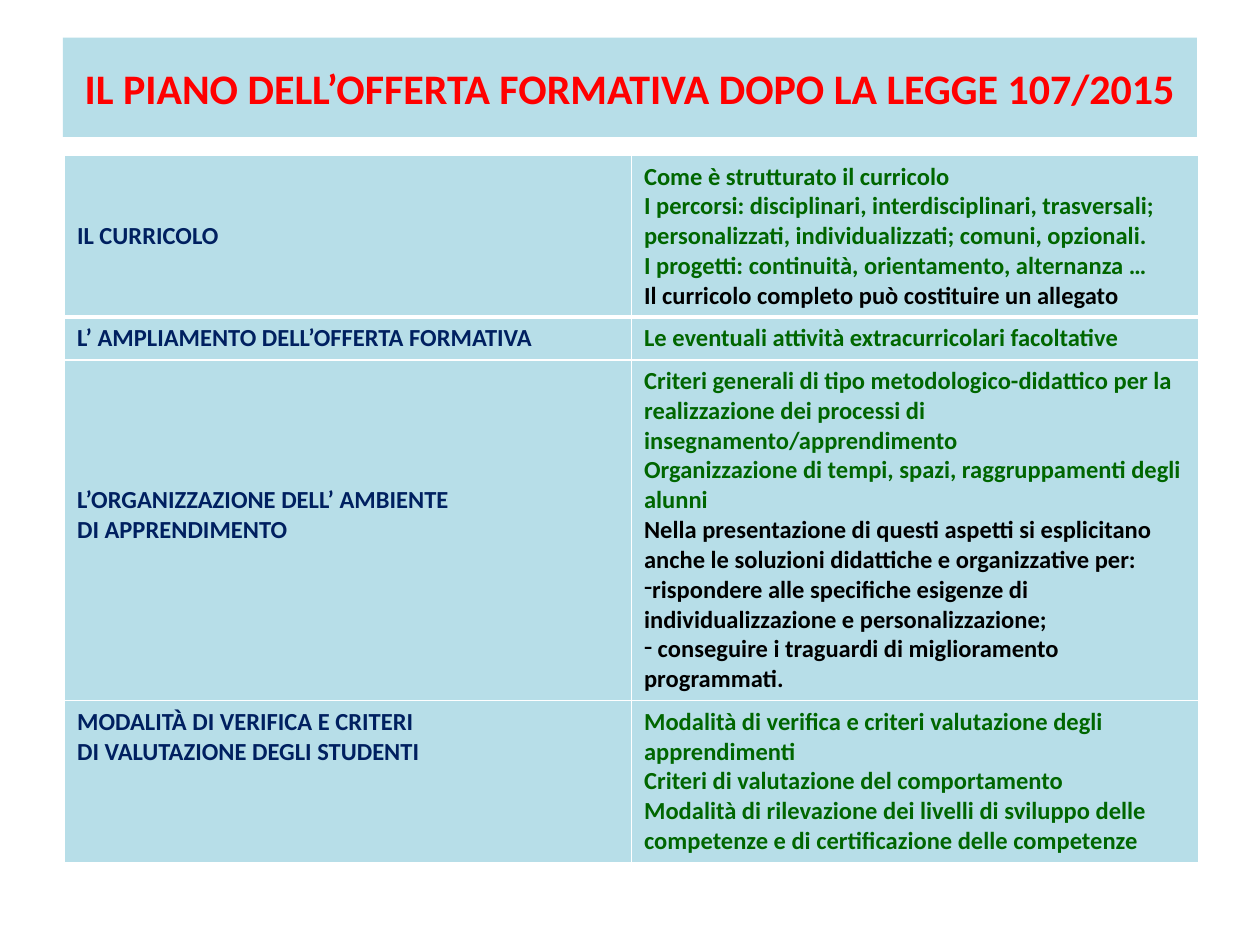
from lxml.etree import SubElement
from pptx import Presentation
from pptx.dml.color import RGBColor
from pptx.enum.shapes import MSO_SHAPE
from pptx.enum.text import MSO_ANCHOR, PP_ALIGN
from pptx.oxml.ns import qn
from pptx.util import Cm, Pt

PALE, WHITE, BLACK = "B7DEE8", "FFFFFF", "000000"
RED, NAVY, GREEN = "FF0000", "002060", "006600"
LINE_HEIGHT = 0.6  # one 14 pt text line, in cm
CELL_MARGIN = 0.13

# Row height (cm), lines left free above the heading, heading, details
ROWS = [
    (3.24, 2, ["IL CURRICOLO"], [
        ("Come è strutturato il curricolo", GREEN),
        ("I percorsi: disciplinari, interdisciplinari, trasversali; "
         "personalizzati, individualizzati; comuni, opzionali.", GREEN),
        ("I progetti: continuità, orientamento, alternanza …", GREEN),
        ("Il curricolo completo può costituire un allegato", BLACK)]),
    (0.86, 0, ["L’ AMPLIAMENTO DELL’OFFERTA FORMATIVA"], [
        ("Le eventuali attività extracurricolari facoltative", GREEN)]),
    (6.86, 4, ["L’ORGANIZZAZIONE DELL’ AMBIENTE", "DI APPRENDIMENTO"], [
        ("Criteri generali di tipo metodologico-didattico per la realizzazione "
         "dei processi di insegnamento/apprendimento", GREEN),
        ("Organizzazione di tempi, spazi, raggruppamenti degli alunni", GREEN),
        ("Nella presentazione di questi aspetti si esplicitano anche le "
         "soluzioni didattiche e organizzative per:", BLACK),
        ("rispondere alle specifiche esigenze di individualizzazione e "
         "personalizzazione;", BLACK, "-"),
        (" conseguire i traguardi di miglioramento programmati.", BLACK, "-")]),
    (3.26, 0, ["MODALITÀ DI VERIFICA E CRITERI", "DI VALUTAZIONE DEGLI STUDENTI"], [
        ("Modalità di verifica e criteri valutazione degli apprendimenti", GREEN),
        ("Criteri di valutazione del comportamento", GREEN),
        ("Modalità di rilevazione dei livelli di sviluppo delle competenze e di "
         "certificazione delle competenze", GREEN)]),
]


def rgb(color):
    return RGBColor.from_string(color)


def write(p, text, color=BLACK, bullet=None, size=14, align=PP_ALIGN.LEFT):
    p.alignment = align
    r = p.add_run()
    r.text = text
    r.font.name, r.font.size, r.font.bold = "Calibri", Pt(size), True
    r.font.color.rgb = rgb(color)
    if bullet:
        pPr = p._p.get_or_add_pPr()
        pPr.set("marL", "0")
        pPr.set("indent", "0")
        SubElement(pPr, qn("a:buFontTx"))
        SubElement(pPr, qn("a:buChar"), char=bullet)


def add_title(s, text):
    sp = s.shapes.add_shape(MSO_SHAPE.RECTANGLE, Cm(1.27), Cm(0.76), Cm(22.86), Cm(2))
    sp.shadow.inherit = False
    sp.fill.solid()
    sp.fill.fore_color.rgb = rgb(PALE)
    sp.line.fill.background()
    tf = sp.text_frame
    tf.word_wrap = True
    tf.vertical_anchor = MSO_ANCHOR.MIDDLE
    write(tf.paragraphs[0], text, color=RED, size=24, align=PP_ALIGN.CENTER)


def set_borders(cell, **widths):
    tcPr = cell._tc.get_or_add_tcPr()
    for side in "LRTB":
        width = Pt(widths.get(side, 1))
        ln = SubElement(tcPr, qn(f"a:ln{side}"), w=str(width))
        fill = SubElement(ln, qn("a:solidFill"))
        SubElement(fill, qn("a:srgbClr"), val=WHITE)


def fill_cell(cell, items, free_lines=0):
    cell.fill.solid()
    cell.fill.fore_color.rgb = rgb(PALE)
    cell.margin_top = Cm(CELL_MARGIN + free_lines * LINE_HEIGHT)
    tf = cell.text_frame
    for i, item in enumerate(items):
        write(tf.add_paragraph() if i else tf.paragraphs[0], *item)


def add_plan_table(s):
    height = sum(row[0] for row in ROWS)
    table = s.shapes.add_table(len(ROWS), 2, Cm(1.3), Cm(3.13), Cm(22.86), Cm(height)).table
    table.first_row = table.horz_banding = False
    for i, (row_height, free_lines, heading, details) in enumerate(ROWS):
        table.rows[i].height = Cm(row_height)
        # A thick line parts the first row from the second
        widths = {0: {"B": 3}, 1: {"T": 3}}.get(i, {})
        for cell in table.rows[i].cells:
            set_borders(cell, **widths)
        fill_cell(table.cell(i, 0), [(line, NAVY) for line in heading], free_lines)
        fill_cell(table.cell(i, 1), details)


def main():
    prs = Presentation()
    prs.slide_width, prs.slide_height = Cm(25.4), Cm(19.05)
    s = prs.slides.add_slide(prs.slide_layouts[6])
    add_title(s, "IL PIANO DELL’OFFERTA FORMATIVA DOPO LA LEGGE 107/2015")
    add_plan_table(s)
    prs.save("out.pptx")


if __name__ == "__main__":
    main()
